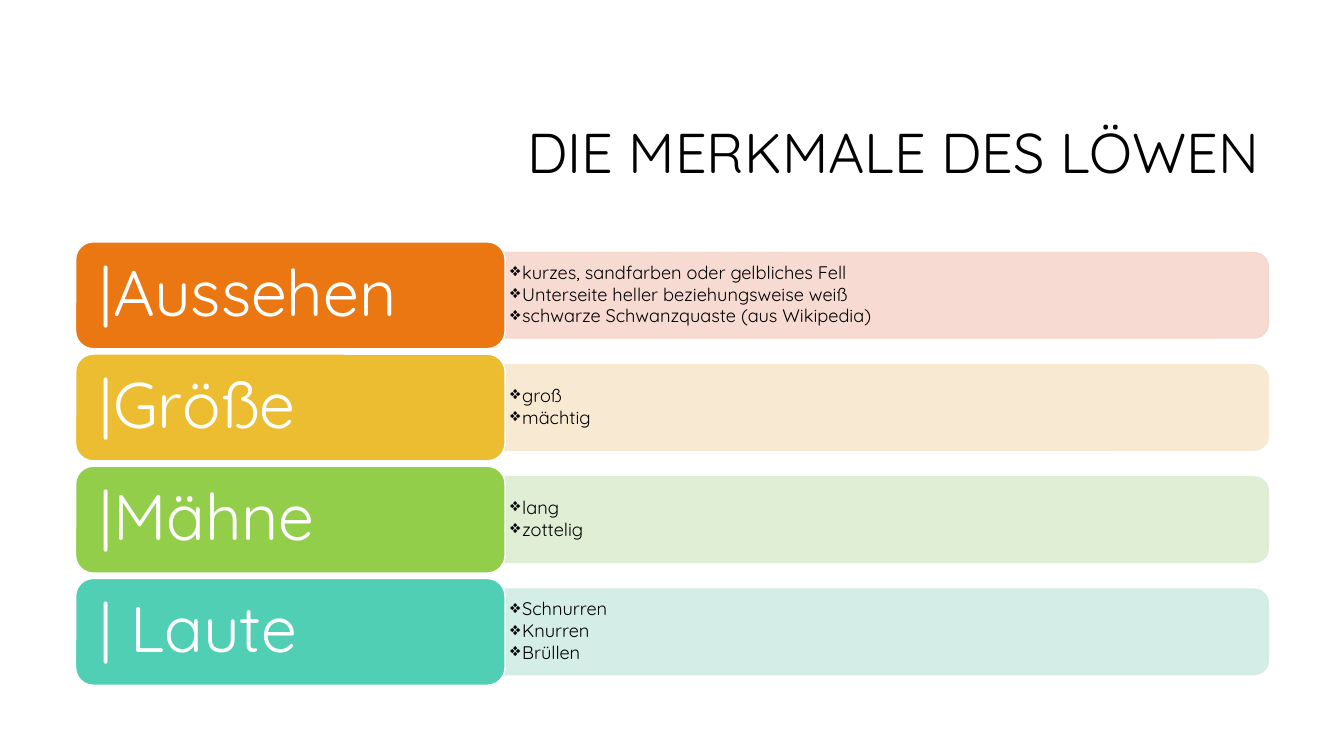
from lxml import etree
from pptx import Presentation
from pptx import util as u
from pptx.dml.color import RGBColor
from pptx.enum import shapes, text
from pptx.oxml.ns import qn

WIDTH, HEIGHT = 13.33, 7.5

# Grid: a label column and a trait column, with rows at an equal pitch
LEFT, TOP = 0.75, 2.4
LABEL_WIDTH, TRAIT_WIDTH = 4.26, 7.57
ROW_HEIGHT = 1.06
ROW_PITCH = ROW_HEIGHT * 1.05
BAR_HEIGHT = ROW_HEIGHT * 0.8

FEATURES = [
    ("|Aussehen", "EB7712", "F7D6CC",
     ["kurzes, sandfarben oder gelbliches Fell",
      "Unterseite heller beziehungsweise weiß",
      "schwarze Schwanzquaste (aus Wikipedia)"]),
    ("|Größe", "ECBD31", "F8E8CE", ["groß", "mächtig"]),
    ("|Mähne", "92CE4A", "DCEDD0", ["lang", "zottelig"]),
    ("| Laute", "50CFB4", "D0EDE5", ["Schnurren", "Knurren", "Brüllen"]),
]


def rgb(value):
    return RGBColor.from_string(value)


def apply_format(target, values):
    for name, value in values.items():
        setattr(target, name, value)


class FeatureSlide:
    FONT = "Quicksand"
    BULLET = "❖"
    LABEL_MARGINS = (0.19, 0.1)
    TRAIT_MARGINS = (0.05, 0.03)

    def __init__(self, deck):
        self.slide = deck.slides.add_slide(deck.slide_layouts[5])

    def set_frame(self, frame, margins):
        across, down = map(u.Inches, margins)
        apply_format(frame, {
            "word_wrap": True,
            "auto_size": text.MSO_AUTO_SIZE.NONE,
            "vertical_anchor": text.MSO_ANCHOR.MIDDLE,
            "margin_left": across, "margin_right": across,
            "margin_top": down, "margin_bottom": down,
        })

    def set_words(self, paragraph, words, size, color, **layout):
        paragraph.text = words
        apply_format(paragraph, {"alignment": text.PP_ALIGN.LEFT,
                                 "line_spacing": 0.9, **layout})
        apply_format(paragraph.font, {"name": self.FONT, "size": u.Pt(size)})
        paragraph.font.color.rgb = rgb(color)

    def shape(self, preset, box, fill, line, alpha=None):
        item = self.slide.shapes.add_shape(preset, *map(u.Inches, box))
        item.shadow.inherit = False
        item.fill.solid()
        item.fill.fore_color.rgb = rgb(fill)
        item.line.color.rgb = rgb(line)
        item.line.width = u.Pt(1)
        if alpha is not None:
            for color in item.element.spPr.iter(qn("a:srgbClr")):
                etree.SubElement(color, qn("a:alpha"), val=str(alpha * 1000))
        return item

    def title(self, words):
        title = self.slide.shapes.title
        apply_format(title, {
            "left": u.Inches(3.17), "top": u.Inches(0.84),
            "width": u.Inches(9.42), "height": u.Inches(1.41),
        })
        self.set_frame(title.text_frame, (0.1, 0.05))
        self.set_words(title.text_frame.paragraphs[0], words, 40, "000000",
                       alignment=text.PP_ALIGN.RIGHT)

    def bar(self, row, color):
        # Turned a quarter so that the rounded end points right
        center_x = LEFT + LABEL_WIDTH + TRAIT_WIDTH / 2
        center_y = TOP + row * ROW_PITCH + ROW_HEIGHT / 2
        box = (center_x - BAR_HEIGHT / 2, center_y - TRAIT_WIDTH / 2,
               BAR_HEIGHT, TRAIT_WIDTH)
        bar = self.shape(shapes.MSO_SHAPE.ROUND_2_SAME_RECTANGLE,
                         box, color, color, alpha=90)
        bar.rotation = 90

    def traits(self, row, traits):
        top = TOP + row * ROW_PITCH + (ROW_HEIGHT - BAR_HEIGHT) / 2
        box = (LEFT + LABEL_WIDTH, top, TRAIT_WIDTH, BAR_HEIGHT)
        frame = self.slide.shapes.add_textbox(*map(u.Inches, box)).text_frame
        self.set_frame(frame, self.TRAIT_MARGINS)
        for index, trait in enumerate(traits):
            paragraph = frame.add_paragraph() if index else frame.paragraphs[0]
            properties = paragraph._p.get_or_add_pPr()
            indent = u.Inches(0.12)
            properties.set("marL", str(indent))
            properties.set("indent", str(-indent))
            etree.SubElement(properties, qn("a:buChar"), char=self.BULLET)
            self.set_words(paragraph, trait, 13, "000000",
                           level=1, space_after=u.Pt(1.5))

    def label(self, row, words, color):
        box = (LEFT, TOP + row * ROW_PITCH, LABEL_WIDTH, ROW_HEIGHT)
        label = self.shape(shapes.MSO_SHAPE.ROUNDED_RECTANGLE,
                           box, color, "FFFFFF")
        self.set_frame(label.text_frame, self.LABEL_MARGINS)
        self.set_words(label.text_frame.paragraphs[0], words, 46, "FFFFFF")


def main():
    deck = Presentation()
    deck.slide_width, deck.slide_height = u.Inches(WIDTH), u.Inches(HEIGHT)
    lion = FeatureSlide(deck)

    # Heading
    lion.title("DIE MERKMALE DES LÖWEN")

    # One row per feature
    for row, (feature, strong, pale, traits) in enumerate(FEATURES):
        lion.bar(row, pale)
        lion.traits(row, traits)
        lion.label(row, feature, strong)

    deck.save("out.pptx")


if __name__ == "__main__":
    main()
